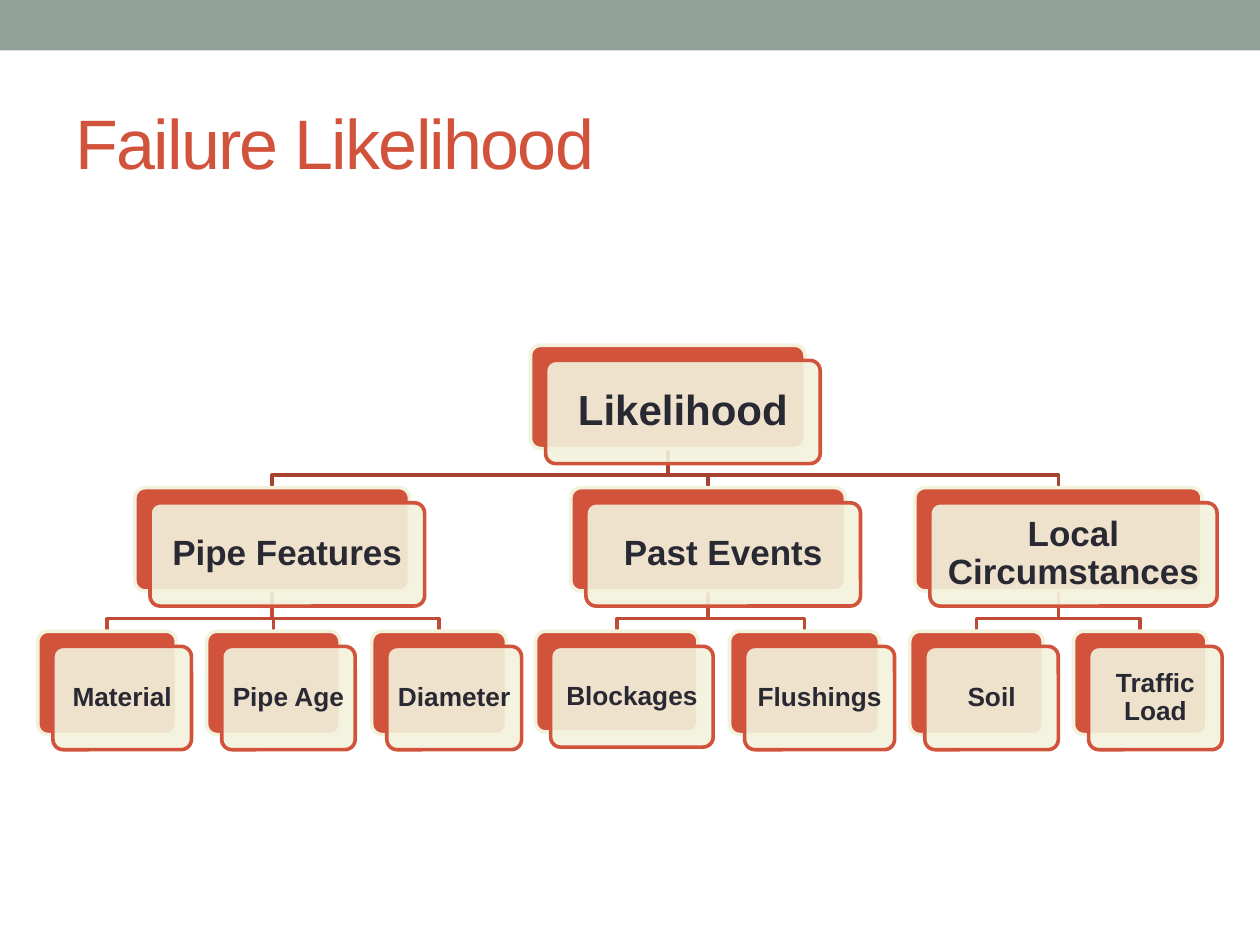
from dataclasses import dataclass

from pptx import Presentation
from pptx.dml.color import RGBColor
from pptx.enum.shapes import MSO_SHAPE
from pptx.enum.text import MSO_ANCHOR, PP_ALIGN
from pptx.oxml.ns import qn
from pptx.util import Inches, Pt
from lxml.etree import SubElement

RED, CREAM, INK, SAGE = "D2533C", "F3F2DC", "292934", "93A299"
OFFSET, ELBOW = 0.12, 0.1
TOPS = [2.74, 3.87, 5.01]
SIZES = [24, 20, 15]
INSETS = [0.1, 0.08, 0.06]
LINK_COLORS = ["A84230", "BF4B36"]


@dataclass
class Node:
    text: str
    left: float
    width: float
    children: tuple = ()
    height: float = 0.82

    @property
    def center(self):
        return self.left + self.width / 2


TREE = Node("Likelihood", 4.21, 2.18, (
    Node("Pipe Features", 1.07, 2.18, (
        Node("Material", 0.3, 1.1),
        Node("Pipe Age", 1.64, 1.06),
        Node("Diameter", 2.95, 1.07))),
    Node("Past Events", 4.53, 2.18, (
        Node("Blockages", 4.25, 1.29, height=0.8),
        Node("Flushings", 5.79, 1.19))),
    Node("Local Circumstances", 7.26, 2.28, (
        Node("Soil", 7.22, 1.06),
        Node("Traffic Load", 8.52, 1.06))),
))


def rgb(value):
    return RGBColor.from_string(value)


class Deck:
    """Draws styled elements on the current slide."""

    def __init__(self, prs, font="Arial", line_width=2.08):
        self.s = prs.slides.add_slide(prs.slide_layouts[6])
        self.font, self.line_width = font, line_width

    def outline(self, sp, color):
        sp.shadow.inherit = False
        sp.line.color.rgb = rgb(color)
        sp.line.width = Pt(self.line_width)

    def add_text(self, sp, text, size, color, bold=False):
        tf = sp.text_frame
        tf.word_wrap = True
        tf.vertical_anchor = MSO_ANCHOR.MIDDLE
        p = tf.paragraphs[0]
        r = p.add_run()
        r.text = text
        r.font.name, r.font.size, r.font.bold = self.font, Pt(size), bold
        r.font.color.rgb = rgb(color)
        return tf, p, r

    def band(self, height, color):
        sp = self.s.shapes.add_shape(MSO_SHAPE.RECTANGLE, 0, 0, Inches(10), Inches(height))
        sp.shadow.inherit = False
        sp.fill.solid()
        sp.fill.fore_color.rgb = rgb(color)
        sp.line.fill.background()

    def title(self, text):
        sp = self.s.shapes.add_textbox(Inches(0.5), Inches(0.58), Inches(9), Inches(1.08))
        r = self.add_text(sp, text, 40, RED)[2]
        r._r.get_or_add_rPr().set("spc", "-100")

    def link(self, parent, child, level):
        start, end = TOPS[level] + parent.height, TOPS[level + 1]
        points = [(parent.center, start), (parent.center, end - ELBOW),
                  (child.center, end - ELBOW), (child.center, end)]
        first, *rest = [(Inches(x), Inches(y)) for x, y in points]
        builder = self.s.shapes.build_freeform(*first)
        builder.add_line_segments(rest, close=False)
        sp = builder.convert_to_shape()
        sp.fill.background()
        self.outline(sp, LINK_COLORS[level])

    def panel(self, left, top, width, height, fill, line):
        sp = self.s.shapes.add_shape(MSO_SHAPE.ROUNDED_RECTANGLE, Inches(left), Inches(top),
                                     Inches(width), Inches(height))
        sp.adjustments[0] = 0.1
        sp.fill.solid()
        sp.fill.fore_color.rgb = rgb(fill)
        self.outline(sp, line)
        return sp

    def card(self, node, level):
        top = TOPS[level]
        self.panel(node.left, top, node.width, node.height, RED, CREAM)
        sp = self.panel(node.left + OFFSET, top + OFFSET, node.width, node.height, CREAM, RED)
        color = sp.element.spPr.find(qn("a:solidFill"))[0]
        SubElement(color, qn("a:alpha")).set("val", "90000")
        tf, p, _ = self.add_text(sp, node.text, SIZES[level], INK, bold=True)
        tf.margin_left = tf.margin_right = Inches(INSETS[level])
        tf.margin_top = tf.margin_bottom = Inches(INSETS[level])
        p.alignment = PP_ALIGN.CENTER
        p.line_spacing = 0.9

    def links(self, node, level=0):
        for child in reversed(node.children):
            self.links(child, level + 1)
            self.link(node, child, level)

    def cards(self, node, level=0):
        self.card(node, level)
        for child in node.children:
            self.cards(child, level + 1)


def main():
    prs = Presentation()
    prs.slide_width, prs.slide_height = Inches(10), Inches(7.5)
    deck = Deck(prs)
    deck.band(0.4, SAGE)
    deck.title("Failure Likelihood")
    deck.links(TREE)
    deck.cards(TREE)
    prs.save("out.pptx")


if __name__ == "__main__":
    main()
